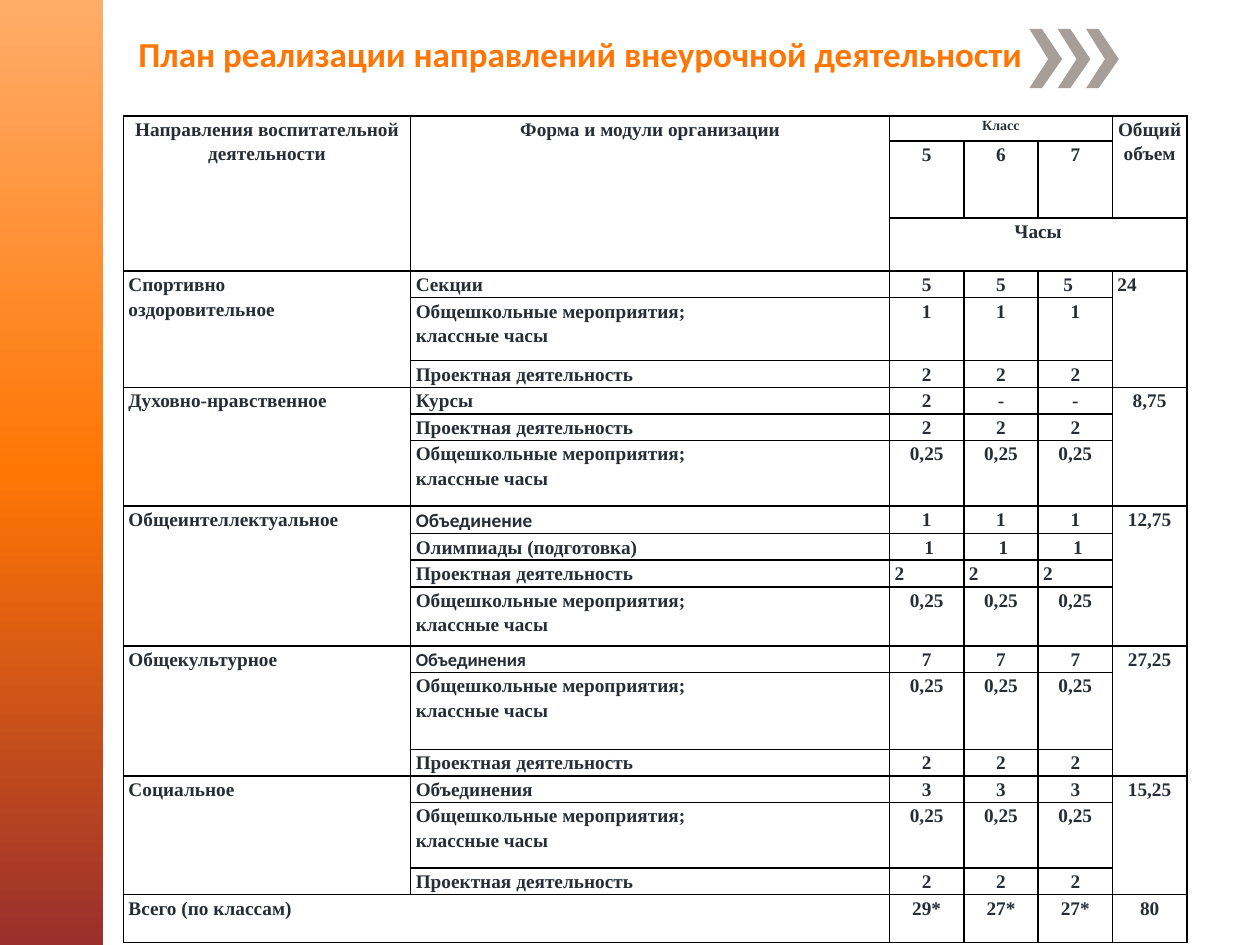
from copy import deepcopy

from lxml.etree import SubElement
from pptx import Presentation
from pptx.dml.color import RGBColor
from pptx.enum.shapes import MSO_SHAPE as Shape
from pptx.enum.text import MSO_ANCHOR as Anchor, PP_ALIGN as Align
from pptx.oxml.ns import qn
from pptx.util import Inches, Pt

ORANGE = RGBColor(0xFF, 0x76, 0x05)
PEACH = RGBColor(0xFF, 0xAD, 0x69)
BRICK = RGBColor(0x9A, 0x2F, 0x2C)
TAUPE = RGBColor(0xA7, 0x9D, 0x99)
INK = RGBColor(0x26, 0x2D, 0x36)
BORDER = "000000"

COLUMN_WIDTHS = [2.28, 3.8] + [0.59] * 4
HEADER_HEIGHTS = [0.2, 0.61, 0.39]
TOTAL_HEIGHT = 0.38
EVENTS = "Общешкольные мероприятия;\nклассные часы"
PROJECT = "Проектная деятельность"
QUARTERS = ["0,25"] * 3

DIRECTIONS = [
    ("Спортивно\nоздоровительное", "24", [
        ("Секции", ["5"] * 3, 0.2),
        (EVENTS, ["1"] * 3, 0.5),
        (PROJECT, ["2"] * 3, 0.2)]),
    ("Духовно-нравственное", "8,75", [
        ("Курсы", ["2", "-", "-"], 0.2),
        (PROJECT, ["2"] * 3, 0.2),
        (EVENTS, QUARTERS, 0.52)]),
    ("Общеинтеллектуальное", "12,75", [
        ("Объединение", ["1"] * 3, 0.22),
        ("Олимпиады (подготовка)", ["1"] * 3, 0.2),
        (PROJECT, ["2"] * 3, 0.2),
        (EVENTS, QUARTERS, 0.47)]),
    ("Общекультурное", "27,25", [
        ("Объединения", ["7"] * 3, 0.2),
        (EVENTS, QUARTERS, 0.61),
        (PROJECT, ["2"] * 3, 0.2)]),
    ("Социальное", "15,25", [
        ("Объединения", ["3"] * 3, 0.2),
        (EVENTS, QUARTERS, 0.52),
        (PROJECT, ["2"] * 3, 0.2)]),
]

LEFT_TOP = {"align": Align.LEFT, "anchor": Anchor.TOP}
SPECIAL_FORMATS = {
    (3, 4): {**LEFT_TOP, "indent": 0.16},
    (3, 5): LEFT_TOP,
    (9, 1): {"font": "Calibri"},
    (13, 1): {"font": "Calibri", "size": 10.5},
    **{(10, column): {"indent": 0.04} for column in (2, 3, 4)},
    **{(11, column): LEFT_TOP for column in (2, 3, 4)},
}


def write_text(frame, text, font="Times New Roman", size=11, color=INK,
               align=Align.LEFT, anchor=Anchor.TOP, indent=0, spacing=1.15):
    frame.word_wrap = True
    frame.vertical_anchor = anchor
    for index, line in enumerate(text.split("\n")):
        para = frame.add_paragraph() if index else frame.paragraphs[0]
        para.alignment = align
        para.line_spacing = spacing
        if indent:
            properties = para._p.get_or_add_pPr()
            properties.set("marL", str(Inches(indent)))
            properties.set("indent", "0")
        span = para.add_run()
        span.text = line
        span.font.name = font
        span.font.size = Pt(size)
        span.font.bold = True
        span.font.color.rgb = color


def add_side_bar(page):
    bar = page.shapes.add_shape(Shape.RECTANGLE, 0, 0, Inches(0.82), Inches(7.5))
    bar.shadow.inherit = False
    bar.line.fill.background()
    bar.fill.gradient()
    bar.fill.gradient_angle = 270
    stop_list = bar._element.spPr.find(qn("a:gradFill")).find(qn("a:gsLst"))
    stop_list.insert(1, deepcopy(stop_list[0]))
    stops = zip(bar.fill.gradient_stops, (PEACH, ORANGE, BRICK), (0, 0.5, 1))
    for stop, color, position in stops:
        stop.color.rgb = color
        stop.position = position


def add_chevrons(page):
    group = page.shapes.add_group_shape()
    outline = [(0.1, 0.23), (0, 0.23), (0.15, 0.47), (0, 0.7), (0.1, 0.7), (0.26, 0.47)]
    for number in range(3):
        left = 8.17 + number * 0.225
        points = [(Inches(left + x), Inches(y)) for x, y in outline]
        builder = group.shapes.build_freeform(*points[0])
        builder.add_line_segments(points[1:], close=True)
        chevron = builder.convert_to_shape()
        chevron.shadow.inherit = False
        chevron.fill.solid()
        chevron.fill.fore_color.rgb = TAUPE
        chevron.line.fill.background()


def add_title(page):
    box = page.shapes.add_textbox(Inches(0.83), Inches(0.21), Inches(7.56), Inches(1.04))
    write_text(box.text_frame, "План реализации направлений внеурочной деятельности",
               font="Calibri", size=20, color=ORANGE, indent=0.17, spacing=1)


def style_cell(cell):
    cell.margin_left = cell.margin_right = Inches(0.04)
    cell.margin_top = cell.margin_bottom = 0
    cell.fill.background()
    properties = cell._tc.get_or_add_tcPr()
    for index, side in enumerate(("a:lnL", "a:lnR", "a:lnT", "a:lnB")):
        line = SubElement(properties, qn(side), w=str(Pt(1)))
        fill = SubElement(line, qn("a:solidFill"))
        SubElement(fill, qn("a:srgbClr"), val=BORDER)
        properties.insert(index, line)


def fill_cell(table, row, column, text, **style):
    style.update(SPECIAL_FORMATS.get((row, column), {}))
    write_text(table.cell(row, column).text_frame, text, **style)


def merge(table, row, column, rows, columns):
    last = table.cell(row + rows - 1, column + columns - 1)
    table.cell(row, column).merge(last)


def fill_hours(table, row, hours):
    for column, value in enumerate(hours, 2):
        fill_cell(table, row, column, value, align=Align.CENTER, anchor=Anchor.MIDDLE)


def fill_header(table):
    for span in ((0, 0, 3, 1), (0, 1, 3, 1), (0, 2, 1, 3), (0, 5, 2, 1), (2, 2, 1, 4)):
        merge(table, *span)
    labels = [(0, 0, "Направления воспитательной деятельности"),
              (0, 1, "Форма и модули организации"), (0, 5, "Общий объем"),
              (1, 2, "5"), (1, 3, "6"), (1, 4, "7"), (2, 2, "Часы")]
    for row, column, text in labels:
        fill_cell(table, row, column, text, align=Align.CENTER)
    fill_cell(table, 0, 2, "Класс", size=8, align=Align.CENTER)


def add_plan_table(page):
    form_heights = [form[2] for _, _, forms in DIRECTIONS for form in forms]
    heights = HEADER_HEIGHTS + form_heights + [TOTAL_HEIGHT]
    table = page.shapes.add_table(
        len(heights), len(COLUMN_WIDTHS), Inches(0.98), Inches(0.92),
        Inches(sum(COLUMN_WIDTHS)), Inches(sum(heights))).table
    table.first_row = table.horz_banding = False
    for column, width in zip(table.columns, COLUMN_WIDTHS):
        column.width = Inches(width)
    for row, height in zip(table.rows, heights):
        row.height = Inches(height)
    for cell in table.iter_cells():
        style_cell(cell)

    fill_header(table)
    row = len(HEADER_HEIGHTS)
    for direction, volume, forms in DIRECTIONS:
        for column, text, align in ((0, direction, Align.LEFT), (5, volume, Align.CENTER)):
            merge(table, row, column, len(forms), 1)
            fill_cell(table, row, column, text, align=align)
        for form, hours, _ in forms:
            fill_cell(table, row, 1, form)
            fill_hours(table, row, hours)
            row += 1
    merge(table, row, 0, 1, 2)
    fill_cell(table, row, 0, "Всего (по классам)")
    fill_hours(table, row, ["29*", "27*", "27*"])
    fill_cell(table, row, 5, "80", align=Align.CENTER)


def main():
    deck = Presentation()
    deck.slide_width, deck.slide_height = Inches(10), Inches(7.5)
    page = deck.slides.add_slide(deck.slide_layouts[6])
    add_side_bar(page)
    add_chevrons(page)
    add_title(page)
    add_plan_table(page)
    deck.save("out.pptx")


if __name__ == "__main__":
    main()
